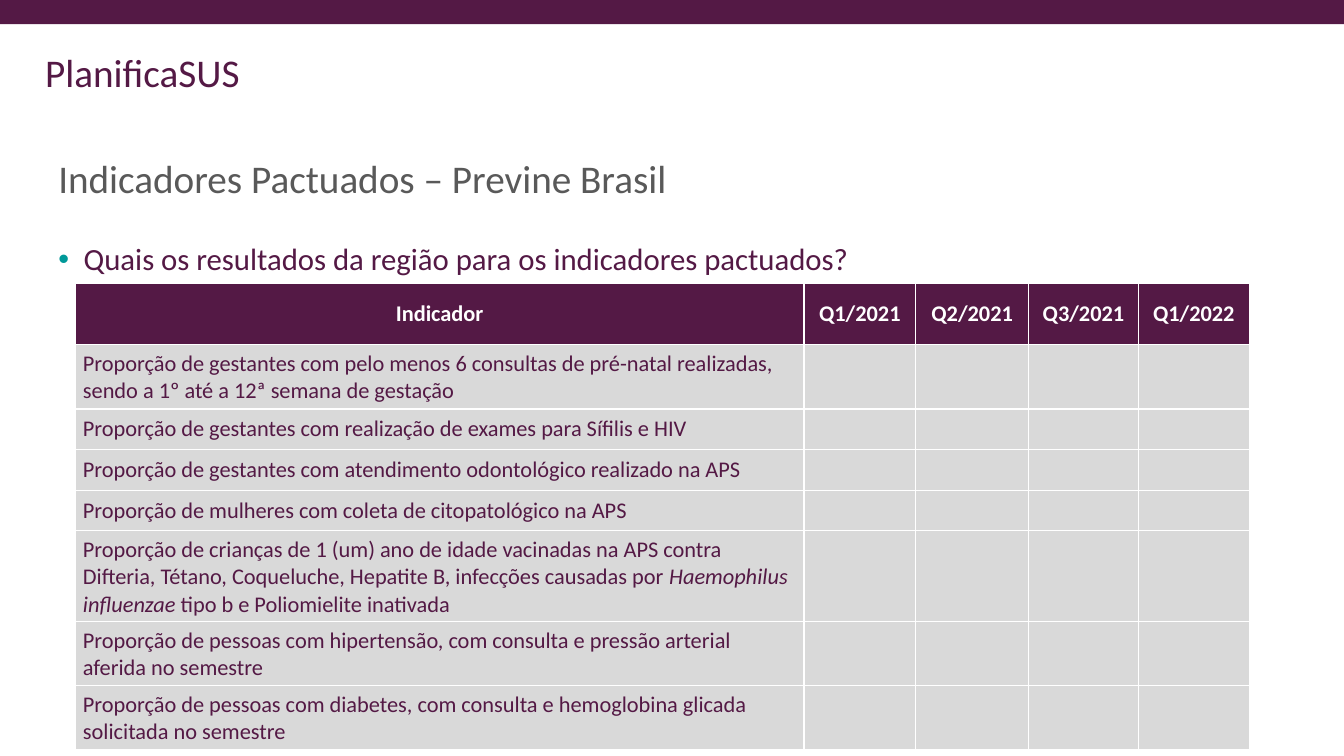
from dataclasses import dataclass
from typing import Any

from lxml import etree
from pptx import Presentation
from pptx import util as u
from pptx.dml.color import RGBColor
from pptx.enum import shapes, text
from pptx.oxml import ns


@dataclass(frozen=True)
class Theme:
    font: str = "Calibri"
    plum: RGBColor = RGBColor(0x54, 0x19, 0x45)
    gray: RGBColor = RGBColor(0x59, 0x59, 0x59)
    teal: RGBColor = RGBColor(0x00, 0x99, 0x99)
    silver: RGBColor = RGBColor(0xD9, 0xD9, 0xD9)
    white: RGBColor = RGBColor(0xFF, 0xFF, 0xFF)
    heading: int = 28
    question: int = 22
    table: int = 16


@dataclass(frozen=True)
class Box:
    left: float
    top: float
    width: float
    height: float

    def lengths(self) -> list[u.Length]:
        return [u.Cm(v) for v in (self.left, self.top, self.width, self.height)]


@dataclass(frozen=True)
class Run:
    words: str
    italic: bool = False


@dataclass(frozen=True)
class Indicator:
    height: float
    runs: tuple[Run, ...]


THEME = Theme()
SLIDE_WIDTH, SLIDE_HEIGHT = 33.87, 19.05
HEADER_HEIGHT = 1.55
COLUMN_WIDTHS = (18.36, 2.82, 2.84, 2.77, 2.79)
HEADINGS = ("Indicador", "Q1/2021", "Q2/2021", "Q3/2021", "Q1/2022")
ONE_LINE, TWO_LINES, THREE_LINES = 0.89, 1.55, 2.18
INDICATORS = (
    Indicator(TWO_LINES, (Run(
        "Proporção de gestantes com pelo menos 6 consultas de pré-natal realizadas, "
        "sendo a 1º até a 12ª semana de gestação"),)),
    Indicator(ONE_LINE, (Run(
        "Proporção de gestantes com realização de exames para Sífilis e HIV"),)),
    Indicator(ONE_LINE, (Run(
        "Proporção de gestantes com atendimento odontológico realizado na APS"),)),
    Indicator(ONE_LINE, (Run(
        "Proporção de mulheres com coleta de citopatológico na APS"),)),
    Indicator(THREE_LINES, (
        Run("Proporção de crianças de 1 (um) ano de idade vacinadas na APS contra "
            "Difteria, Tétano, Coqueluche, Hepatite B, infecções causadas por "),
        Run("Haemophilus influenzae", italic=True),
        Run(" tipo b e Poliomielite inativada"))),
    Indicator(TWO_LINES, (Run(
        "Proporção de pessoas com hipertensão, com consulta e pressão arterial "
        "aferida no semestre"),)),
    Indicator(TWO_LINES, (Run(
        "Proporção de pessoas com diabetes, com consulta e hemoglobina glicada "
        "solicitada no semestre"),)),
)


def write_run(paragraph: Any, words: str, color: RGBColor, size: int,
              **extra: bool) -> None:
    run = paragraph.add_run()
    run.text = words
    run.font.color.rgb = color
    for name, value in {"name": THEME.font, "size": u.Pt(size), **extra}.items():
        setattr(run.font, name, value)


def add_text(slide: Any, box: Box, words: str, color: RGBColor, size: int,
             **frame_format: Any) -> Any:
    """Add a one-paragraph text box and return its paragraph."""
    frame = slide.shapes.add_textbox(*box.lengths()).text_frame
    for name, value in {"word_wrap": True, **frame_format}.items():
        setattr(frame, name, value)
    paragraph = frame.paragraphs[0]
    write_run(paragraph, words, color, size)
    return paragraph


def add_bullet(paragraph: Any, color: RGBColor) -> None:
    properties = paragraph._p.get_or_add_pPr()
    indent = u.Cm(0.64)
    properties.set("marL", str(indent))
    properties.set("indent", str(-indent))
    bullet_color = etree.SubElement(properties, ns.qn("a:buClr"))
    etree.SubElement(bullet_color, ns.qn("a:srgbClr"), val=str(color))
    etree.SubElement(properties, ns.qn("a:buFont"), typeface="Arial")
    etree.SubElement(properties, ns.qn("a:buChar"), char="•")


def style_cell(cell: Any, fill: RGBColor) -> None:
    """Give the cell its margins, white borders and fill."""
    margins = {"margin_left": 0.19, "margin_right": 0.19,
               "margin_top": 0.13, "margin_bottom": 0.13}
    for name, value in margins.items():
        setattr(cell, name, u.Cm(value))
    cell.vertical_anchor = text.MSO_ANCHOR.MIDDLE
    properties = cell._tc.get_or_add_tcPr()
    for side in ("lnL", "lnR", "lnT", "lnB"):
        line = etree.SubElement(properties, ns.qn(f"a:{side}"), w=str(u.Pt(1)))
        solid = etree.SubElement(line, ns.qn("a:solidFill"))
        etree.SubElement(solid, ns.qn("a:srgbClr"), val=str(THEME.white))
    cell.fill.solid()
    cell.fill.fore_color.rgb = fill


def add_indicator_table(slide: Any) -> None:
    heights = (HEADER_HEIGHT, *(indicator.height for indicator in INDICATORS))
    box = Box(1.9, 7.14, sum(COLUMN_WIDTHS), sum(heights))
    table = slide.shapes.add_table(
        len(heights), len(COLUMN_WIDTHS), *box.lengths()).table
    for column, width in zip(table.columns, COLUMN_WIDTHS):
        column.width = u.Cm(width)
    for index, (row, height) in enumerate(zip(table.rows, heights)):
        row.height = u.Cm(height)
        for cell in row.cells:
            style_cell(cell, THEME.silver if index else THEME.plum)

    for column, heading in enumerate(HEADINGS):
        paragraph = table.cell(0, column).text_frame.paragraphs[0]
        paragraph.alignment = text.PP_ALIGN.CENTER
        write_run(paragraph, heading, THEME.white, THEME.table, bold=True)
    for index, indicator in enumerate(INDICATORS, start=1):
        paragraph = table.cell(index, 0).text_frame.paragraphs[0]
        for run in indicator.runs:
            write_run(paragraph, run.words, THEME.plum, THEME.table,
                      bold=False, italic=run.italic)


def add_top_band(slide: Any) -> None:
    band = slide.shapes.add_shape(
        shapes.MSO_SHAPE.RECTANGLE, *Box(0, 0, SLIDE_WIDTH, 0.61).lengths())
    band.shadow.inherit = False
    band.fill.solid()
    band.fill.fore_color.rgb = THEME.plum
    band.line.fill.background()


def main() -> None:
    deck = Presentation()
    deck.slide_width, deck.slide_height = u.Cm(SLIDE_WIDTH), u.Cm(SLIDE_HEIGHT)
    slide = deck.slides.add_slide(deck.slide_layouts[6])

    add_text(slide, Box(0.89, 1.09, 5.46, 1.45), "PlanificaSUS",
             THEME.plum, THEME.heading, word_wrap=False,
             auto_size=text.MSO_AUTO_SIZE.SHAPE_TO_FIT_TEXT)
    add_top_band(slide)
    title = add_text(slide, Box(1.22, 2.72, 27.91, 3.68),
                     "Indicadores Pactuados – Previne Brasil",
                     THEME.gray, THEME.heading,
                     vertical_anchor=text.MSO_ANCHOR.MIDDLE)
    question = add_text(slide, Box(1.22, 6.02, 27.91, 10.13),
                        "Quais os resultados da região para os indicadores pactuados?",
                        THEME.plum, THEME.question)
    add_bullet(question, THEME.teal)
    for paragraph in (title, question):
        paragraph.line_spacing = 0.9
    add_indicator_table(slide)
    deck.save("out.pptx")


if __name__ == "__main__":
    main()
